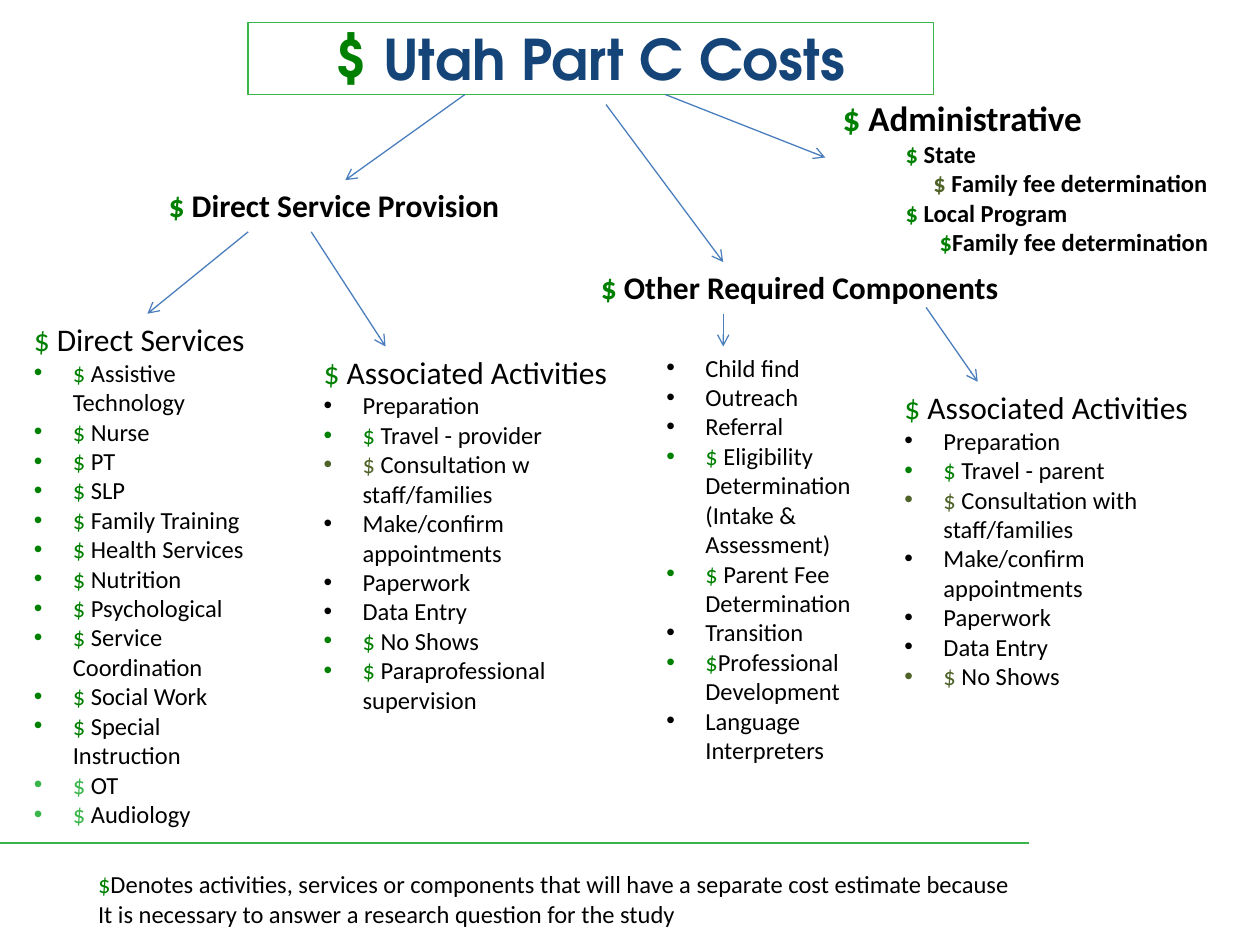
from lxml import etree
from pptx import Presentation
from pptx.dml.color import RGBColor
from pptx.enum import shapes, text
from pptx.oxml.ns import qn
from pptx.util import Inches, Pt

BLACK = RGBColor(0x00, 0x00, 0x00)
GREEN = RGBColor(0x00, 0x80, 0x00)
LIGHT_GREEN = RGBColor(0x39, 0xB5, 0x4A)
OLIVE = RGBColor(0x4F, 0x62, 0x28)
NAVY = RGBColor(0x15, 0x45, 0x78)
BLUE = RGBColor(0x4B, 0x7E, 0xBC)

BULLET = 0.31


def write_line(paragraph, wording, size, bold=False, sign=GREEN, color=BLACK,
               face="Calibri", indent=0, bulleted=False):
    """Fill a paragraph, giving a leading dollar sign its own colour."""
    properties = paragraph._p.get_or_add_pPr()
    if bulleted:
        properties.set("marL", str(Inches(BULLET)))
        properties.set("indent", str(-Inches(BULLET)))
        etree.SubElement(properties, qn("a:buFont")).set("typeface", "Arial")
        etree.SubElement(properties, qn("a:buChar")).set("char", "•")
    elif indent:
        properties.set("marL", str(Inches(indent)))
    parts = [(wording, color)]
    if wording.startswith("$"):
        parts = [("$", sign), (wording[1:], color)]
    for part, part_color in parts:
        run = paragraph.add_run()
        run.text = part
        run.font.color.rgb = part_color
        for key, value in {"size": Pt(size), "bold": bold, "name": face}.items():
            setattr(run.font, key, value)


def draw_line(start, end, color, width, arrow=False):
    line = slide.shapes.add_connector(
        shapes.MSO_CONNECTOR.STRAIGHT, *map(Inches, start + end))
    line.line.color.rgb = color
    line.line.width = Pt(width)
    if arrow:
        etree.SubElement(line.line._get_or_add_ln(), qn("a:tailEnd")).set("type", "arrow")
    etree.SubElement(line._element.spPr, qn("a:effectLst"))


prs = Presentation()
prs.slide_width, prs.slide_height = Inches(10), Inches(7.5)
slide = prs.slides.add_slide(prs.slide_layouts[6])

draw_line((0, 6.69), (8.17, 6.69), LIGHT_GREEN, 1.5)

title = slide.shapes.add_shape(
    shapes.MSO_SHAPE.RECTANGLE, Inches(1.97), Inches(0.18), Inches(5.44), Inches(0.57))
title.shadow.inherit = False
title.fill.background()
title.line.color.rgb = LIGHT_GREEN
title.line.width = Pt(1)
title.text_frame.vertical_anchor = text.MSO_ANCHOR.MIDDLE
title_line = title.text_frame.paragraphs[0]
title_line.alignment = text.PP_ALIGN.CENTER
write_line(title_line, "$ Utah Part C Costs", 32, bold=True, color=NAVY,
           face="TeX Gyre Adventor")

arrows = [
    ((3.69, 0.75), (2.74, 1.43)),
    ((4.81, 0.83), (5.74, 2.08)),
    ((5.28, 0.75), (6.55, 1.25)),
    ((1.97, 1.84), (1.17, 2.49)),
    ((2.47, 1.84), (3.06, 2.75)),
    ((5.74, 2.49), (5.74, 2.75)),
    ((7.35, 2.44), (7.76, 3.03)),
]
for start, end in arrows:
    draw_line(start, end, BLUE, 0.75, arrow=True)

# Line formats
branch = {"size": 18, "bold": True}
heading = {"size": 18}
item = {"size": 14, "bulleted": True}
olive_item = {**item, "sign": OLIVE}
light_item = {**item, "sign": LIGHT_GREEN}
level = {"size": 14, "bold": True, "indent": 0.5}
note = {"size": 14}

# Each block: left, top, width, height and its lines grouped by format
blocks = [
    ((1.24, 1.43, 3.25, 0.4), [(branch, ["$ Direct Service Provision"])]),
    ((4.67, 2.08, 3.42, 0.4), [(branch, ["$ Other Required Components"])]),
    ((6.59, 0.72, 3.13, 1.38), [
        ({"size": 20, "bold": True}, ["$ Administrative"]),
        (level, ["$ State"]),
        ({**level, "indent": 0.72, "sign": OLIVE}, ["$ Family fee determination"]),
        (level, ["$ Local Program"]),
        ({**level, "indent": 0.77}, ["$Family fee determination"]),
    ]),
    ((0.17, 2.49, 2, 4.17), [
        (heading, ["$ Direct Services"]),
        (item, ["$ Assistive Technology", "$ Nurse", "$ PT", "$ SLP",
                "$ Family Training", "$ Health Services", "$ Nutrition",
                "$ Psychological", "$ Service Coordination", "$ Social Work",
                "$ Special Instruction"]),
        (light_item, ["$ OT", "$ Audiology"]),
    ]),
    ((2.47, 2.75, 2.5, 3), [
        (heading, ["$ Associated Activities"]),
        (item, ["Preparation", "$ Travel - provider"]),
        (olive_item, ["$ Consultation w staff/families"]),
        (item, ["Make/confirm appointments", "Paperwork", "Data Entry",
                "$ No Shows", "$ Paraprofessional supervision"]),
    ]),
    ((5.19, 2.75, 1.99, 3.4), [
        (item, ["Child find", "Outreach", "Referral",
                "$ Eligibility Determination (Intake & Assessment)",
                "$ Parent Fee Determination", "Transition",
                "$Professional Development", "Language Interpreters"]),
    ]),
    ((7.08, 3.03, 2.76, 2.52), [
        (heading, ["$ Associated Activities"]),
        (item, ["Preparation", "$ Travel - parent"]),
        (olive_item, ["$ Consultation with staff/families"]),
        (item, ["Make/confirm appointments", "Paperwork", "Data Entry"]),
        (olive_item, ["$ No Shows"]),
    ]),
    ((0.68, 6.85, 9.17, 0.57), [
        (note, ["$Denotes activities, services or components that will have "
                "a separate cost estimate because",
                "It is necessary to answer a research question for the study"]),
    ]),
]
for place, groups in blocks:
    frame = slide.shapes.add_textbox(*map(Inches, place)).text_frame
    frame.word_wrap = True
    frame.auto_size = text.MSO_AUTO_SIZE.SHAPE_TO_FIT_TEXT
    lines = [(wording, style) for style, wordings in groups for wording in wordings]
    for number, (wording, style) in enumerate(lines):
        paragraph = frame.add_paragraph() if number else frame.paragraphs[0]
        write_line(paragraph, wording, **style)

prs.save("out.pptx")
